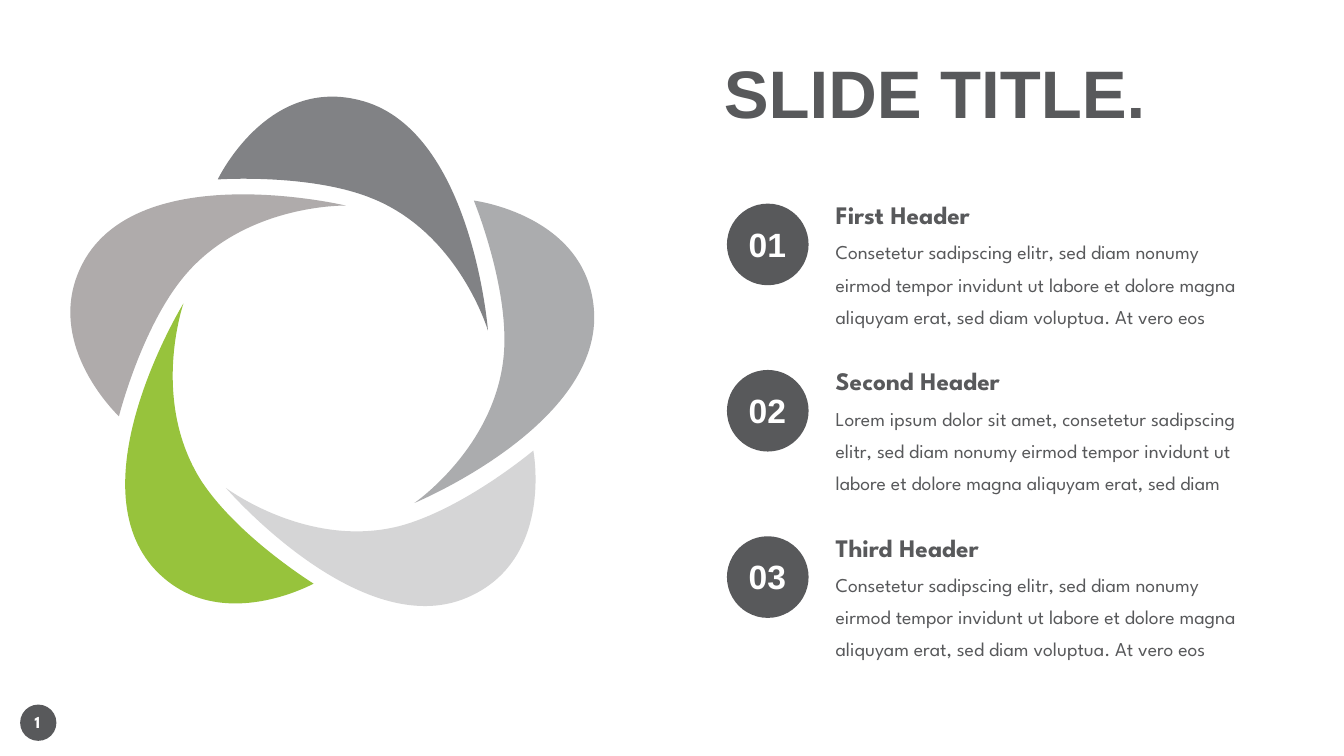
from dataclasses import dataclass

from pptx import Presentation, util as u
from pptx.dml.color import RGBColor
from pptx.enum import shapes, text
from pptx.oxml import ns, xmlchemy

COLORS = {
    "dark": "58595B", "white": "FFFFFF", "taupe": "AFABAB", "slate": "818285",
    "silver": "ABACAE", "pale": "D5D5D6", "green": "97C33C",
}
HEAD_FONT, BODY_FONT = "Arial", "League Spartan"
ROW_TOP, ROW_PITCH = 1.91, 1.65
UNITS_PER_INCH = 100

Point = tuple[float, float]


@dataclass
class Petal:
    color: str
    base: Point
    outer_start: Point
    outer: Point
    outer_end: Point
    tip: Point
    inner_start: Point
    inner: Point
    inner_end: Point


@dataclass
class Item:
    number: str
    header: str
    body: str


@dataclass
class Style:
    size: int
    font: str = BODY_FONT
    color: str = "dark"
    bold: bool = False
    align: text.PP_ALIGN = text.PP_ALIGN.LEFT
    spacing: u.Length | float | None = None


PETALS = [
    Petal("taupe", (1.18, 4.13), (0.37, 3.37), (0.85, 2.56), (1.45, 1.57),
          (3.43, 2.04), (2.42, 2.02), (1.82, 2.75), (1.4, 3.26)),
    Petal("slate", (2.16, 1.78), (2.64, 0.77), (3.55, 0.99), (4.68, 1.25),
          (4.84, 3.28), (4.55, 2.3), (3.67, 1.96), (3.06, 1.72)),
    Petal("silver", (4.7, 1.99), (5.81, 2.13), (5.89, 3.06), (5.99, 4.21),
          (4.11, 4.99), (4.94, 4.42), (5, 3.48), (5.04, 2.82)),
    Petal("pale", (5.29, 4.47), (5.5, 5.56), (4.63, 5.93), (3.57, 6.38),
          (2.24, 4.84), (3.05, 5.45), (3.96, 5.22), (4.6, 5.05)),
    Petal("green", (3.11, 5.79), (2.13, 6.33), (1.51, 5.62), (0.76, 4.74),
          (1.82, 3.01), (1.49, 3.96), (1.99, 4.76), (2.35, 5.32)),
]

CONSETETUR = ("Consetetur sadipscing elitr, sed diam nonumy eirmod tempor invidunt ut "
              "labore et dolore magna aliquyam erat, sed diam voluptua. At vero eos")
ITEMS = [
    Item("01", "First Header", CONSETETUR),
    Item("02", "Second Header",
         "Lorem ipsum dolor sit amet, consetetur sadipscing elitr, sed diam nonumy "
         "eirmod tempor invidunt ut labore et dolore magna aliquyam erat, sed diam"),
    Item("03", "Third Header", CONSETETUR),
]

TITLE = Style(48, HEAD_FONT, bold=True, spacing=0.9)
HEADER = Style(18, bold=True, spacing=u.Pt(23))
BODY = Style(14, spacing=u.Pt(23))
BADGE = Style(24, HEAD_FONT, "white", True, text.PP_ALIGN.CENTER)
PAGE = Style(12, BODY_FONT, "white", True, text.PP_ALIGN.CENTER)


def rgb(name: str) -> RGBColor:
    return RGBColor.from_string(COLORS[name])


def paint(sp, color: str) -> None:
    sp.shadow.inherit = False
    sp.fill.solid()
    sp.fill.fore_color.rgb = rgb(color)
    sp.line.fill.background()


def write(tf, words: str, style: Style) -> None:
    p = tf.paragraphs[0]
    p.alignment = style.align
    if style.spacing is not None:
        p.line_spacing = style.spacing
    r = p.add_run()
    r.text = words
    r.font.name = style.font
    r.font.size = u.Pt(style.size)
    r.font.bold = style.bold
    r.font.color.rgb = rgb(style.color)


def add_text(parent, box: tuple, words: str, style: Style, wrap: bool = True) -> None:
    tf = parent.add_textbox(*map(u.Inches, box)).text_frame
    tf.word_wrap = wrap
    tf.auto_size = text.MSO_AUTO_SIZE.SHAPE_TO_FIT_TEXT
    write(tf, words, style)


def add_disc(parent, left: float, top: float, size: float) -> None:
    sp = parent.add_shape(shapes.MSO_SHAPE.OVAL, *map(u.Inches, (left, top, size, size)))
    paint(sp, "dark")


def bend(sp) -> None:
    """Turn each three line segments of a freeform into one cubic curve."""
    lines = list(sp.element.iter(ns.qn("a:lnTo")))
    for i in range(0, len(lines), 3):
        curve = xmlchemy.OxmlElement("a:cubicBezTo")
        lines[i].addprevious(curve)
        for line in lines[i:i + 3]:
            curve.append(line[0])
            line.getparent().remove(line)


def add_petal(parent, petal: Petal) -> None:
    controls = [
        petal.base, petal.outer_start, petal.outer,
        petal.outer_end, petal.tip, petal.tip,
        petal.tip, petal.inner_start, petal.inner,
        petal.inner_end, petal.base, petal.base,
    ]
    points = [(round(x * UNITS_PER_INCH), round(y * UNITS_PER_INCH)) for x, y in controls]
    builder = parent.build_freeform(*points[0], scale=u.Inches(1) / UNITS_PER_INCH)
    builder.add_line_segments(points, close=True)
    sp = builder.convert_to_shape()
    bend(sp)
    paint(sp, petal.color)


def add_item(s, item: Item, top: float) -> None:
    words = s.shapes.add_group_shape().shapes
    add_text(words, (8.19, top + 0.34, 4.3, 1.37), item.body, BODY)
    add_text(words, (8.19, top, 3.85, 0.4), item.header, HEADER)
    badge = s.shapes.add_group_shape().shapes
    add_disc(badge, 7.21, top + 0.11, 0.81)
    add_text(badge, (7.27, top + 0.26, 0.68, 0.5), item.number, BADGE)


def add_title(s, words: str) -> None:
    sp = s.shapes.title
    sp.left, sp.top, sp.width, sp.height = map(u.Inches, (7.08, 0.46, 6.75, 0.44))
    tf = sp.text_frame
    tf.word_wrap = True
    tf.auto_size = text.MSO_AUTO_SIZE.NONE
    tf.vertical_anchor = text.MSO_ANCHOR.TOP
    tf.margin_top = u.Inches(0.14)
    write(tf, words, TITLE)
    tf.paragraphs[0].space_before = u.Pt(10)


def main() -> None:
    prs = Presentation()
    prs.slide_width, prs.slide_height = u.Inches(13.33), u.Inches(7.5)
    s = prs.slides.add_slide(prs.slide_layouts[5])
    add_title(s, "SLIDE TITLE.")
    add_disc(s.shapes, 0.2, 6.99, 0.36)
    add_text(s.shapes, (0.17, 7.01, 0.4, 0.3), "1", PAGE, wrap=False)
    ring = s.shapes.add_group_shape().shapes
    for petal in PETALS:
        add_petal(ring, petal)
    for row, item in enumerate(ITEMS):
        add_item(s, item, ROW_TOP + row * ROW_PITCH)
    prs.save("out.pptx")


if __name__ == "__main__":
    main()
